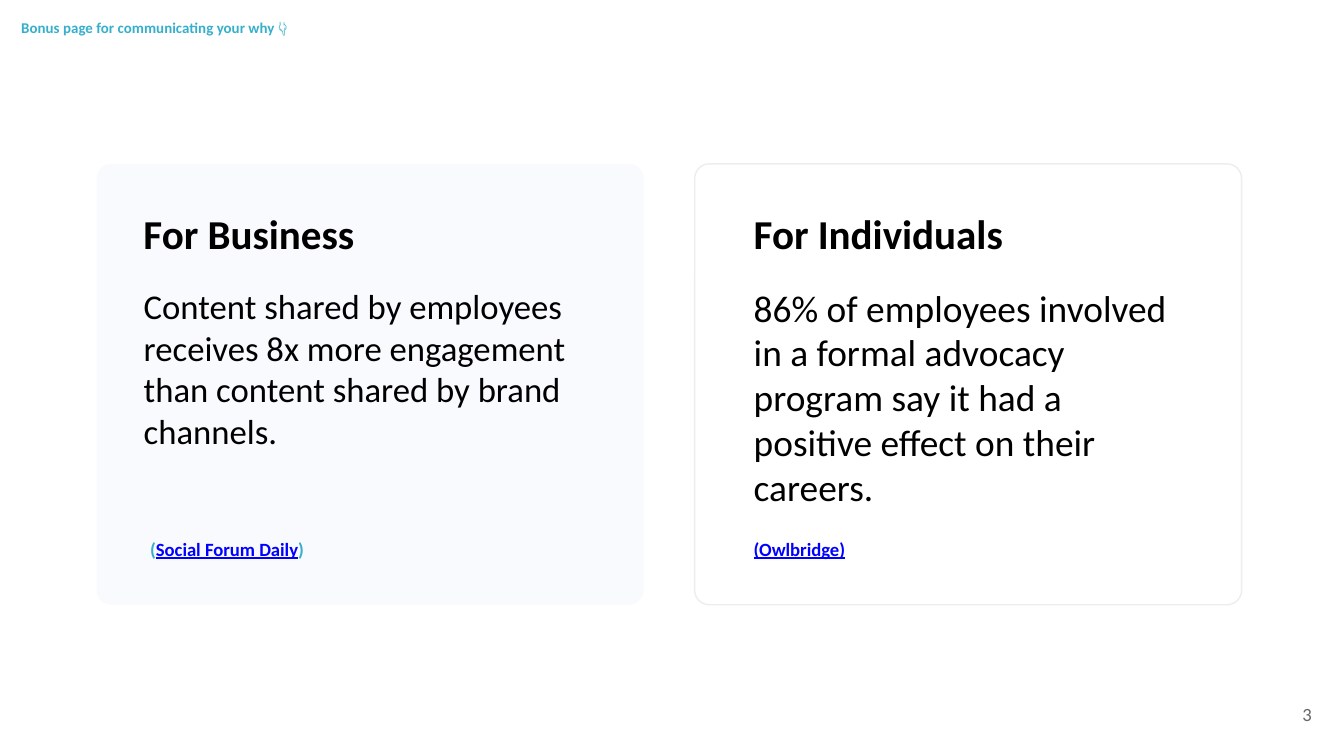
from dataclasses import dataclass
from typing import Optional

from pptx import Presentation
from pptx.dml.color import RGBColor
from pptx.enum.shapes import MSO_SHAPE
from pptx.enum.text import MSO_ANCHOR, MSO_AUTO_SIZE, PP_ALIGN
from pptx.util import Pt

ROUND = MSO_SHAPE.ROUNDED_RECTANGLE
TOP, MIDDLE = MSO_ANCHOR.TOP, MSO_ANCHOR.MIDDLE
LEFT, RIGHT = PP_ALIGN.LEFT, PP_ALIGN.RIGHT
NO_FIT = MSO_AUTO_SIZE.NONE

BLACK = RGBColor(0x00, 0x00, 0x00)
WHITE = RGBColor(0xFF, 0xFF, 0xFF)
PALE = RGBColor(0xF8, 0xFA, 0xFD)
EDGE = RGBColor(0xED, 0xED, 0xEE)
GRAY = RGBColor(0x66, 0x66, 0x66)
TEAL = RGBColor(0x36, 0xAF, 0xCC)
LINK = RGBColor(0x00, 0x00, 0xFF)

FACE = "Calibri"
INSET = Pt(7.2)
CARD_X, CARD_Y, CARD_W, CARD_H = 51.8, 87.8, 293, 236.2
STEP = 320.4
HEAD_Y, BODY_Y, CITE_Y = 104.4, 145.4, 280.8
WIDE = 271.4


@dataclass
class Run:
    text: str
    size: float
    color: RGBColor = BLACK
    bold: bool = False
    under: bool = False


@dataclass
class Box:
    x: float
    y: float
    w: float
    h: float


@dataclass
class Card:
    fill: RGBColor
    edge: Optional[RGBColor]
    head: str
    body: Run
    area: Box
    cite: list[Run]
    cite_x: float
    title: bool = False


def place(shape, box: Box) -> None:
    spots = {"left": box.x, "top": box.y, "width": box.w, "height": box.h}
    for name, value in spots.items():
        setattr(shape, name, Pt(value))


def write(shape, runs: list[Run], align=LEFT, anchor=TOP, wrap=True) -> None:
    frame = shape.text_frame
    form = {"word_wrap": wrap, "auto_size": NO_FIT, "vertical_anchor": anchor,
            "margin_left": INSET, "margin_right": INSET,
            "margin_top": INSET, "margin_bottom": INSET}
    for name, value in form.items():
        setattr(frame, name, value)
    para = frame.paragraphs[0]
    para.alignment = align
    for item in runs:
        run = para.add_run()
        run.text = item.text
        look = {"name": FACE, "size": Pt(item.size),
                "bold": item.bold, "underline": item.under}
        for name, value in look.items():
            setattr(run.font, name, value)
        run.font.color.rgb = item.color


def add_text(slide, box: Box, runs: list[Run], **form) -> None:
    shape = slide.shapes.add_textbox(0, 0, 0, 0)
    place(shape, box)
    write(shape, runs, **form)


def add_panel(slide, box: Box, card: Card) -> None:
    panel = slide.shapes.add_shape(ROUND, 0, 0, 0, 0)
    place(panel, box)
    panel.adjustments[0] = 0.033
    panel.shadow.inherit = False
    panel.fill.solid()
    panel.fill.fore_color.rgb = card.fill
    if card.edge is None:
        panel.line.fill.background()
    else:
        panel.line.color.rgb = card.edge
        panel.line.width = Pt(0.75)


def add_card(slide, x: float, card: Card) -> None:
    add_panel(slide, Box(x, CARD_Y, CARD_W, CARD_H), card)
    if card.title:
        title = slide.shapes.title
        place(title, card.area)
        write(title, [card.body])
        # Bring the title in front of its panel
        title.element.getparent().append(title.element)
    else:
        add_text(slide, card.area, [card.body])
    add_text(slide, Box(card.area.x, HEAD_Y, WIDE, 46.8),
             [Run(card.head, 22, bold=True)])
    add_text(slide, Box(card.cite_x, CITE_Y, WIDE, 31), card.cite)


CARDS = [
    Card(PALE, None, "For Business",
         Run("Content shared by employees receives 8x more engagement "
             "than content shared by brand channels.", 18.6),
         Box(69.8, BODY_Y, 253.4, 110.2),
         [Run("(", 10, TEAL, True),
          Run("Social Forum Daily", 10, LINK, True, True),
          Run(")", 10, TEAL, True)],
         73.4, title=True),
    Card(WHITE, EDGE, "For Individuals",
         Run("86% of employees involved in a formal advocacy program "
             "say it had a positive effect on their careers.", 20),
         Box(396.7, BODY_Y, 241.9, 134.6),
         [Run("(Owlbridge)", 10, LINK, True, True)],
         396.7),
]


def main() -> None:
    deck = Presentation()
    deck.slide_width, deck.slide_height = Pt(720), Pt(405)
    slide = deck.slides.add_slide(deck.slide_layouts[5])

    # Cards, side by side
    for i, card in enumerate(CARDS):
        add_card(slide, CARD_X + i * STEP, card)

    # Top note and page number
    add_text(slide, Box(4.3, 2.9, 371.5, 27.4),
             [Run("Bonus page for communicating your why 👇", 8, TEAL, True)])
    add_text(slide, Box(689, 369.4, 20.9, 26.6), [Run("3", 10, GRAY)],
             align=RIGHT, anchor=MIDDLE, wrap=False)

    deck.save("out.pptx")


if __name__ == "__main__":
    main()
